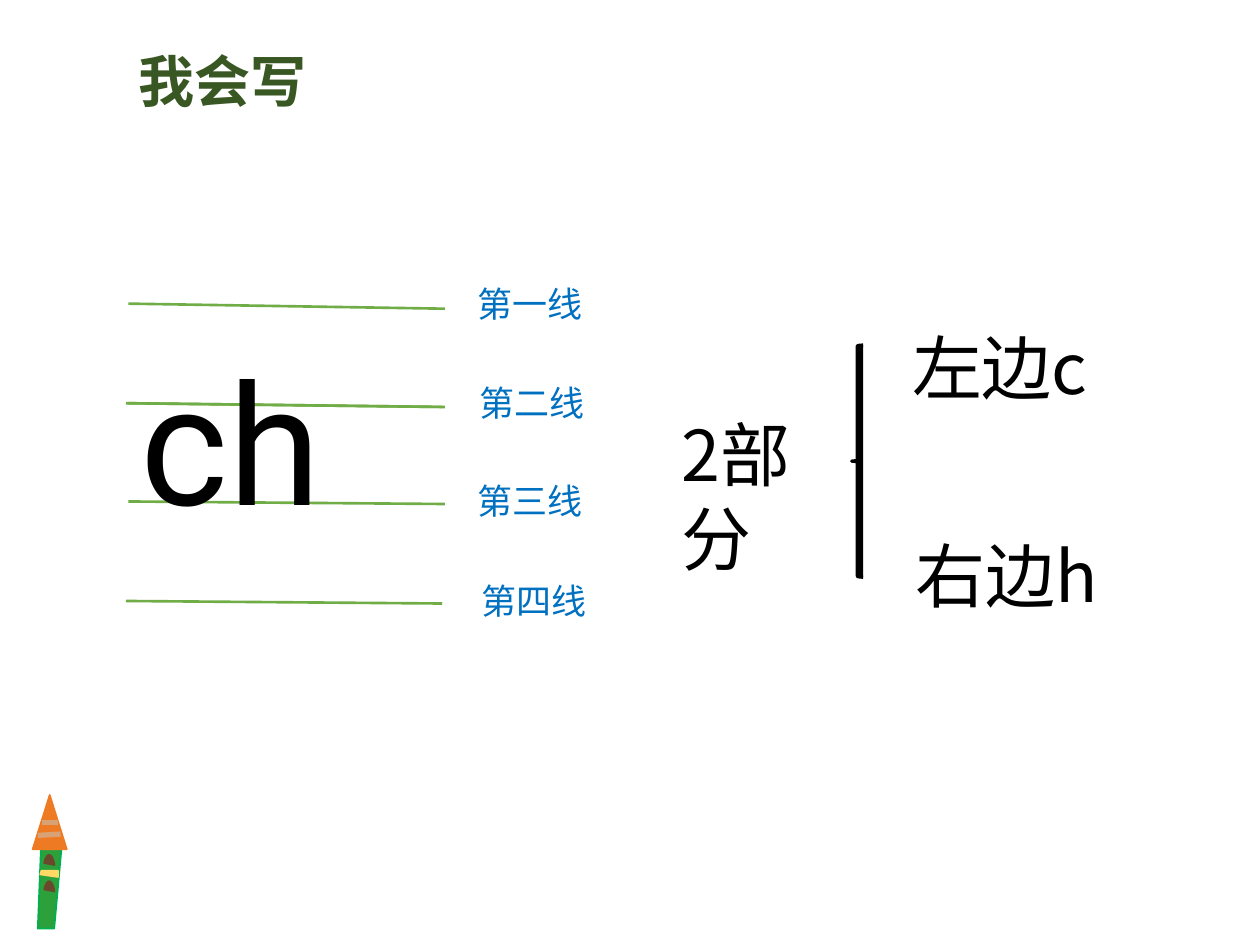
import pptx
import pptx.dml.color
import pptx.enum.shapes
import pptx.enum.text
import pptx.oxml
import pptx.oxml.ns
import pptx.util

PX = 9144
CJK = "Noto Sans CJK SC"
SHAPES = pptx.enum.shapes.MSO_SHAPE
ALIGN = pptx.enum.text.PP_ALIGN


def emu(*lengths):
    return [pptx.util.Emu(n * PX) for n in lengths]


def rgb(value):
    return pptx.dml.color.RGBColor.from_string(value)


def write(tf, text, size=40, font=CJK, color="000000", bold=False, align=ALIGN.LEFT, wrap=True):
    tf.word_wrap = wrap
    tf.auto_size = pptx.enum.text.MSO_AUTO_SIZE.SHAPE_TO_FIT_TEXT
    tf.vertical_anchor = pptx.enum.text.MSO_ANCHOR.TOP
    p = tf.paragraphs[0]
    p.alignment = align
    r = p.add_run()
    r.text = text
    r.font.size = pptx.util.Pt(size)
    r.font.bold = bold
    r.font.name = font
    r.font.color.rgb = rgb(color)
    ea = pptx.oxml.parse_xml(f'<a:ea {pptx.oxml.ns.nsdecls("a")} typeface="{font}"/>')
    r.font.fill
    r._r.get_or_add_rPr().append(ea)


class Slide:
    def __init__(self, prs):
        self.s = prs.slides.add_slide(prs.slide_layouts[5])

    def title(self, box, text, **style):
        sp = self.s.shapes.title
        sp.left, sp.top, sp.width, sp.height = emu(*box)
        write(sp.text_frame, text, **style)

    def text(self, box, text, **style):
        sp = self.s.shapes.add_textbox(*emu(*box))
        write(sp.text_frame, text, **style)

    def paint(self, sp, fill, line, width):
        sp.shadow.inherit = False
        sp.fill.solid()
        sp.fill.fore_color.rgb = rgb(fill)
        sp.line.color.rgb = rgb(line)
        sp.line.width = pptx.util.Pt(width)

    def shape(self, kind, box, fill, width=1, rotation=0, adjust=()):
        sp = self.s.shapes.add_shape(kind, *emu(*box))
        sp.rotation = rotation
        for i, value in enumerate(adjust):
            sp.adjustments[i] = value
        self.paint(sp, fill, fill, width)

    def polygon(self, points, fill, line):
        builder = self.s.shapes.build_freeform(*points[0], scale=PX)
        builder.add_line_segments(points[1:], close=True)
        self.paint(builder.convert_to_shape(), fill, line, 1)

    def line(self, start, end, color, width):
        kind = pptx.enum.shapes.MSO_CONNECTOR.STRAIGHT
        sp = self.s.shapes.add_connector(kind, *emu(*start, *end))
        sp.line.color.rgb = rgb(color)
        sp.line.width = pptx.util.Pt(width)
        effects = pptx.oxml.parse_xml(f'<a:effectLst {pptx.oxml.ns.nsdecls("a")}/>')
        sp._element.spPr.append(effects)


def draw_tower(s):
    s.polygon([(33, 661), (49, 671), (43, 737), (30, 737)], "2CA03B", "00B050")
    s.shape(SHAPES.ISOSCELES_TRIANGLE, (26, 631, 27, 43), "EE7A24")
    for top in (687, 708):
        s.shape(SHAPES.CHORD, (26, top, 26, 9), "69482C", rotation=90, adjust=(89.45, 132.13))
    s.polygon([(33, 691), (46, 691), (46, 696), (32, 694)], "FFD966", "FFD966")
    s.line((33, 653), (46, 653), "D9A275", 3)
    s.line((30, 663), (48, 662), "D9A275", 3)


def draw_writing_lines(s):
    for x, y, drop in ((102, 320, 3), (102, 398, 2), (102, 241, 4), (100, 477, 2), (100, 320, 3)):
        s.line((x, y), (x + 251, y + drop), "70AD47", 1.5)
    s.text((102, 263, 202, 172), "ch", size=96, font="Roboto")
    labels = ((369, 219, "第一线"), (371, 298, "第二线"), (369, 376, "第三线"), (372, 455, "第四线"))
    for x, y, label in labels:
        s.text((x, y, 140, 44), label, size=20, color="0070C0")


def draw_parts(s):
    s.text((531, 322, 125, 145), "2部分")
    s.shape(SHAPES.LEFT_BRACE, (676, 274, 9, 184), "000000", width=2)
    s.text((714, 253, 159, 77), "左边c")
    s.text((717, 418, 173, 77), "右边h")


def main():
    prs = pptx.Presentation()
    prs.slide_width, prs.slide_height = emu(1000, 750)
    s = Slide(prs)
    draw_tower(s)
    s.title((99, 32, 155, 64), "我会写", size=32, color="385723", bold=True,
            align=ALIGN.CENTER, wrap=False)
    draw_writing_lines(s)
    draw_parts(s)
    prs.save("out.pptx")


if __name__ == "__main__":
    main()
